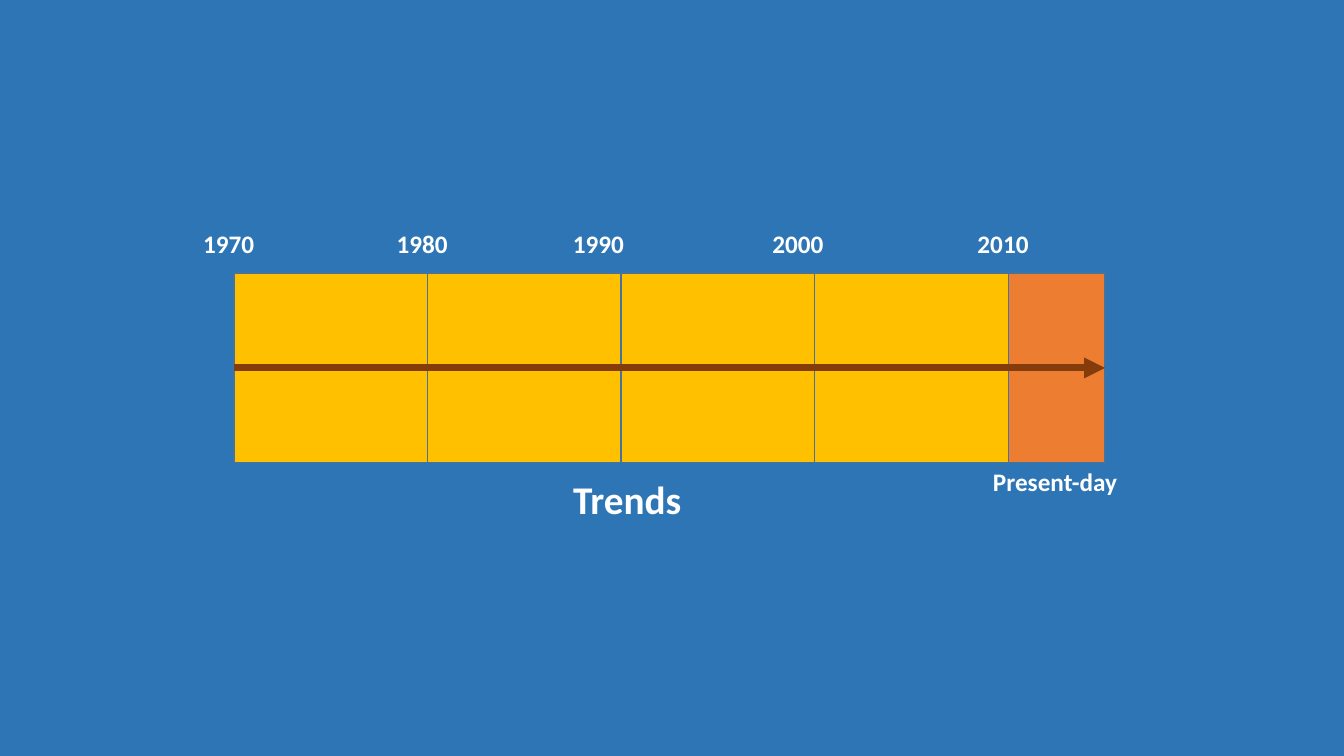
from dataclasses import dataclass

from lxml import etree
from pptx import Presentation, util as u
from pptx.dml.color import RGBColor
from pptx.enum import shapes, text
from pptx.oxml import ns


@dataclass(frozen=True)
class Theme:
    background: str = "2E75B6"
    decade: str = "FFC000"
    present: str = "ED7D31"
    outline: str = "43739E"
    arrow: str = "843C0B"
    lettering: str = "FFFFFF"
    font: str = "Calibri"
    title_size: int = 28
    label_size: int = 18
    outline_width: int = 1
    arrow_width: int = 5


@dataclass(frozen=True)
class Grid:
    """One column is a decade; four rows make the height of the band."""
    left: float = 2.32
    top: float = 2.71
    column: float = 1.92
    row: float = 0.47

    def place(self, column: float, row: float, columns: float, rows: float) -> dict[str, int]:
        return {
            "left": u.Inches(self.left + column * self.column),
            "top": u.Inches(self.top + row * self.row),
            "width": u.Inches(columns * self.column),
            "height": u.Inches(rows * self.row),
        }


@dataclass(frozen=True)
class Period:
    column: float
    columns: float
    color: str


@dataclass(frozen=True)
class Label:
    words: str
    column: float
    row: float = -1.06
    columns: float = 0.37
    rows: float = 0.85


THEME = Theme()
GRID = Grid()
BAND_ROWS = 4
DECADES = 4

PERIODS = [Period(number, 1, THEME.decade) for number in range(DECADES)]
PERIODS.append(Period(DECADES, 0.5, THEME.present))

TITLE = Label("Trends", 1.7, 4.17, 0.67, 1.21)
LABELS = [
    Label("1970", -0.21),
    Label("1980", 0.79),
    Label("1990", 1.7),
    Label("2000", 2.73),
    Label("2010", 3.79),
    Label("Present-day", 3.87, 3.98, 0.76),
]


def rgb(color: str) -> RGBColor:
    return RGBColor.from_string(color)


def assign(target, values: dict) -> None:
    for name, value in values.items():
        setattr(target, name, value)


def write_label(box, label: Label, size: int) -> None:
    assign(box, GRID.place(label.column, label.row, label.columns, label.rows))
    frame = box.text_frame
    frame.text = label.words
    assign(frame, {
        "word_wrap": False,
        "auto_size": text.MSO_AUTO_SIZE.SHAPE_TO_FIT_TEXT,
        "vertical_anchor": text.MSO_ANCHOR.TOP,
    })
    para = frame.paragraphs[0]
    para.alignment = text.PP_ALIGN.LEFT
    font = para.runs[0].font
    assign(font, {"name": THEME.font, "size": u.Pt(size), "bold": True})
    font.color.rgb = rgb(THEME.lettering)


def draw_period(page, period: Period):
    area = GRID.place(period.column, 0, period.columns, BAND_ROWS)
    box = page.shapes.add_shape(shapes.MSO_SHAPE.RECTANGLE, **area)
    box.shadow.inherit = False
    box.fill.solid()
    box.fill.fore_color.rgb = rgb(period.color)
    box.line.color.rgb = rgb(THEME.outline)
    box.line.width = u.Pt(THEME.outline_width)
    return box


def draw_arrow(page, first, last) -> None:
    arrow = page.shapes.add_connector(shapes.MSO_CONNECTOR.STRAIGHT, 0, 0, 0, 0)
    arrow.begin_connect(first, 1)
    arrow.end_connect(last, 3)
    arrow.line.color.rgb = rgb(THEME.arrow)
    arrow.line.width = u.Pt(THEME.arrow_width)
    etree.SubElement(arrow.line._get_or_add_ln(), ns.qn("a:tailEnd"), type="triangle")
    etree.SubElement(arrow._element.spPr, ns.qn("a:effectLst"))


def main() -> None:
    deck = Presentation()
    assign(deck, {"slide_width": u.Inches(13.33), "slide_height": u.Inches(7.5)})
    page = deck.slides.add_slide(deck.slide_layouts.get_by_name("Title Only"))
    page.background.fill.solid()
    page.background.fill.fore_color.rgb = rgb(THEME.background)

    # Title under the band
    write_label(page.shapes.title, TITLE, THEME.title_size)

    # Band of decades with the arrow of time
    boxes = [draw_period(page, period) for period in PERIODS]
    draw_arrow(page, boxes[0], boxes[-1])

    # Years and present day
    for label in LABELS:
        box = page.shapes.add_textbox(0, 0, 0, 0)
        write_label(box, label, THEME.label_size)

    deck.save("out.pptx")


if __name__ == "__main__":
    main()
